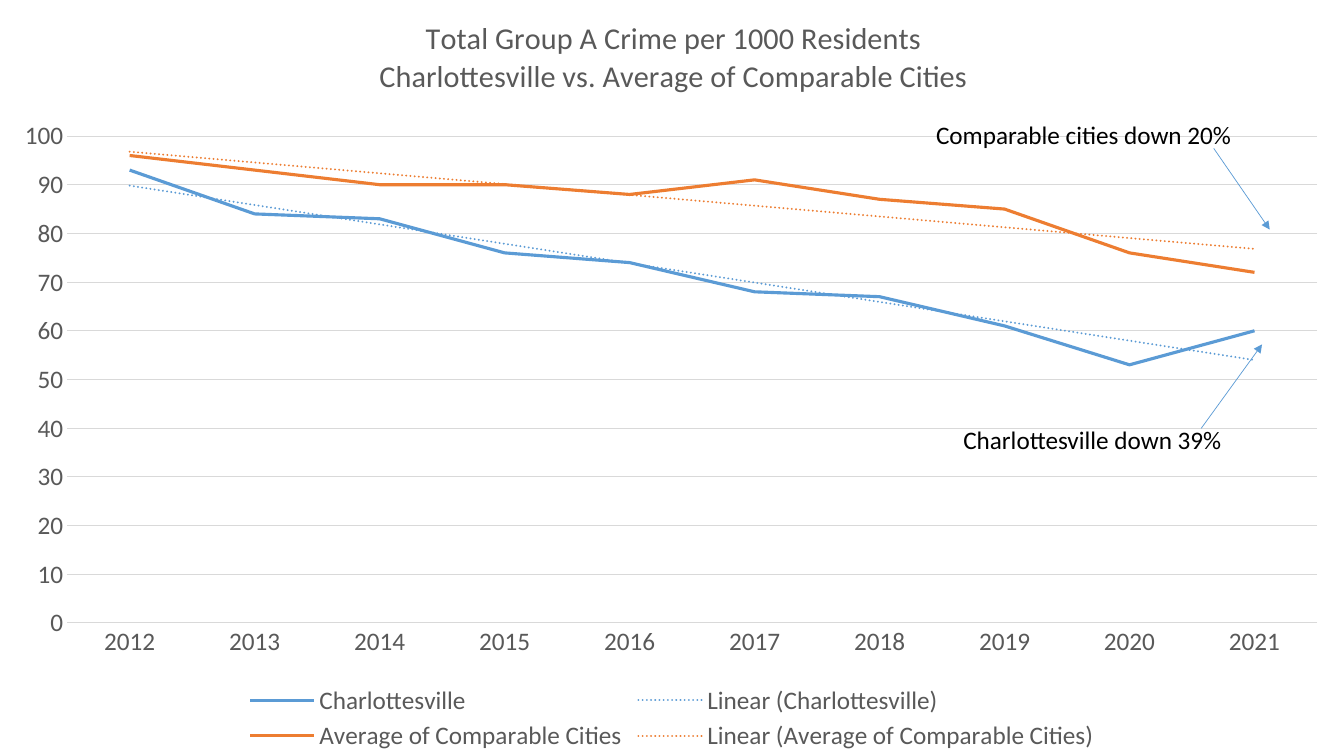
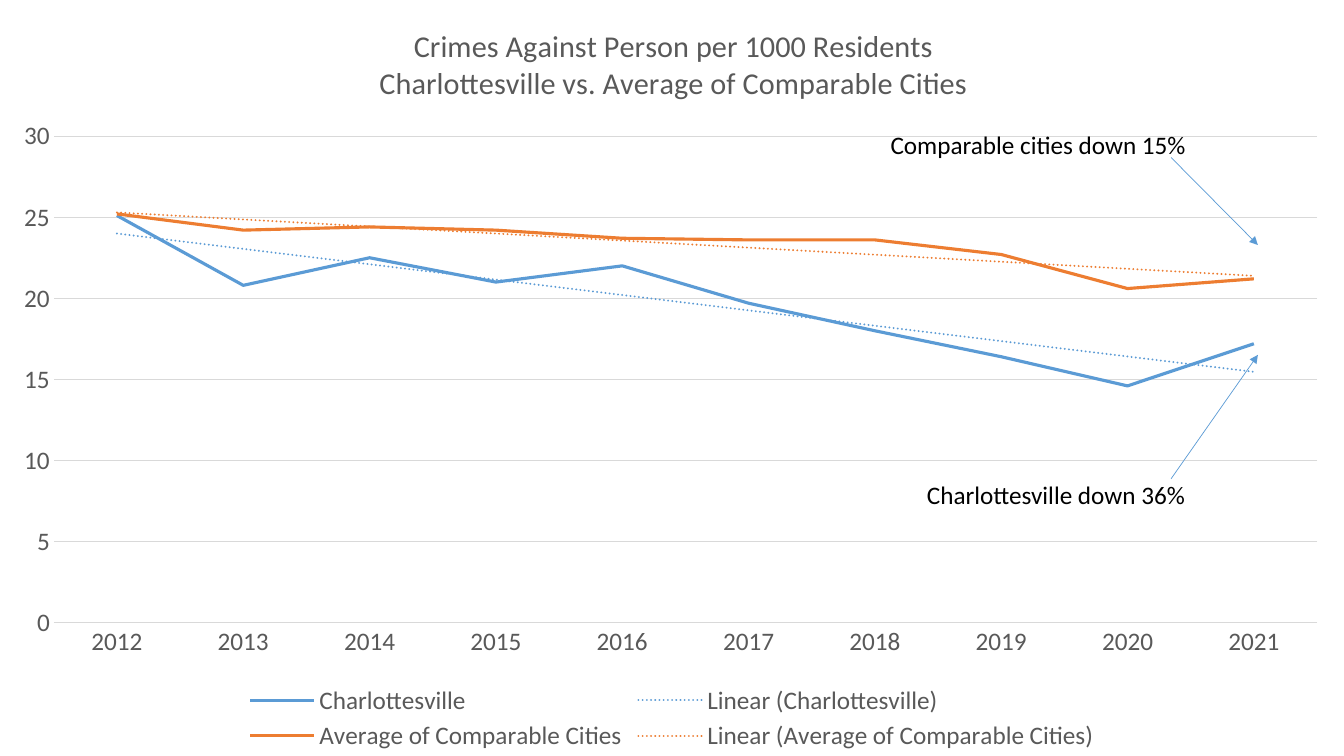
import pptx
import pptx.util
import pptx.chart.data
import pptx.dml.color
import pptx.enum.chart
import pptx.enum.dml
import pptx.enum.shapes
import pptx.enum.text
import pptx.oxml
import pptx.oxml.ns

Pt = pptx.util.Pt
qn = pptx.oxml.ns.qn

# Shared look
WIDTH, HEIGHT = 960, 540
FONT = "Calibri"
COLORS = {"city": "5B9BD5", "peers": "ED7D31", "label": "595959",
          "grid": "D9D9D9", "text": "000000"}
SERIES = [("Charlottesville", "city"), ("Average of Comparable Cities", "peers")]
YEARS = [str(year) for year in range(2012, 2022)]
SUBTITLE = "Charlottesville vs. Average of Comparable Cities"

# Annotation: text, text box (left, top, width), arrow start, arrow end
SLIDES = [
    {"title": "Total Group A Crime per 1000 Residents", "title_top": 0.02,
     "plot_left": 0.05, "max": 100, "step": 10,
     "city": [93, 84, 83, 76, 74, 68, 67, 61, 53, 60],
     "peers": [96, 93, 90, 90, 88, 91, 87, 85, 76, 72],
     "notes": [
         ("Charlottesville down 39%", (681, 299.5, 202), (858, 306), (901.5, 246)),
         ("Comparable cities down 20%", (661.5, 81.5, 240), (867, 106), (907, 164)),
     ]},
    {"title": "Crimes Against Person per 1000 Residents", "title_top": 0.03,
     "plot_left": 0.04, "max": 30, "step": 5,
     "city": [25.1, 20.8, 22.5, 21, 22, 19.7, 18, 16.4, 14.6, 17.2],
     "peers": [25.2, 24.2, 24.4, 24.2, 23.7, 23.6, 23.6, 22.7, 20.6, 21.2],
     "notes": [
         ("Charlottesville down 36%", (655, 338.5, 202), (836.5, 342), (898.5, 253.5)),
         ("Comparable cities down 15%", (629, 88.5, 228), (836.5, 112.5), (898.5, 175)),
     ]},
]


def rgb(name):
    return pptx.dml.color.RGBColor.from_string(COLORS[name])


def style_font(font, size=18, color="label"):
    font.name, font.size, font.bold = FONT, Pt(size), False
    font.color.rgb = rgb(color)


def style_line(line, color, width):
    line.color.rgb = rgb(color)
    line.width = Pt(width)


def write(tf, text, size=18, color="text", align=pptx.enum.text.PP_ALIGN.LEFT):
    """Write each line of text as a formatted paragraph."""
    for i, line in enumerate(text.split("\n")):
        p = tf.add_paragraph() if i else tf.paragraphs[0]
        p.alignment = align
        r = p.add_run()
        r.text = line
        style_font(r.font, size, color)


def chart_xml(body):
    return pptx.oxml.parse_xml(
        body.replace(">", " " + pptx.oxml.ns.nsdecls("c", "a") + ">", 1))


def set_layout(element, index, target=None, **place):
    """Place a chart part by fractions of the chart's size."""
    for old in element.findall(qn("c:layout")):
        element.remove(old)
    parts = f'<c:layoutTarget val="{target}"/>' if target else ""
    parts += "".join(f'<c:{key}Mode val="edge"/>' for key in "xy")
    parts += "".join(f'<c:{key} val="{value}"/>' for key, value in place.items())
    element.insert(index, chart_xml(
        f"<c:layout><c:manualLayout>{parts}</c:manualLayout></c:layout>"))


def add_trend(series, color):
    trend = chart_xml(
        '<c:trendline><c:spPr><a:ln w="19050" cap="rnd"><a:solidFill>'
        f'<a:srgbClr val="{COLORS[color]}"/></a:solidFill>'
        '<a:prstDash val="sysDot"/></a:ln></c:spPr>'
        '<c:trendlineType val="linear"/><c:dispRSqr val="0"/>'
        '<c:dispEq val="0"/></c:trendline>')
    series._element.find(qn("c:cat")).addprevious(trend)


def add_crime_chart(slide, box, data):
    chart_data = pptx.chart.data.CategoryChartData()
    chart_data.categories = YEARS
    for name, key in SERIES:
        chart_data.add_series(name, data[key])
    chart = slide.shapes.add_chart(
        pptx.enum.chart.XL_CHART_TYPE.LINE, *map(Pt, box), chart_data).chart
    style_font(chart.font, color="text")

    # Title
    chart.has_title = True
    write(chart.chart_title.text_frame, data["title"] + "\n" + SUBTITLE,
          size=21.6, color="label", align=pptx.enum.text.PP_ALIGN.CENTER)
    set_layout(chart.chart_title._element, 1, x=0.28, y=data["title_top"])

    # Plot area
    left = data["plot_left"]
    set_layout(chart._chartSpace.chart.plotArea, 0, "inner",
               x=left, y=0.18, w=round(0.98 - left, 2), h=0.644)
    chart.plots[0].vary_by_categories = False
    for series, (_, color) in zip(chart.plots[0].series, SERIES):
        series.smooth = False
        style_line(series.format.line, color, 2.25)
        add_trend(series, color)

    # Axes
    years, rates = chart.category_axis, chart.value_axis
    for axis in (years, rates):
        axis.major_tick_mark = axis.minor_tick_mark = pptx.enum.chart.XL_TICK_MARK.NONE
        style_font(axis.tick_labels.font)
    style_line(years.format.line, "grid", 0.75)
    rates.format.line.fill.background()
    rates.minimum_scale, rates.maximum_scale = 0, data["max"]
    rates.major_unit = data["step"]
    rates.tick_labels.number_format = "#,##0"
    rates.tick_labels.number_format_is_linked = False
    rates.has_major_gridlines = True
    style_line(rates.major_gridlines.format.line, "grid", 0.75)

    # Legend
    chart.has_legend = True
    chart.legend.position = pptx.enum.chart.XL_LEGEND_POSITION.BOTTOM
    chart.legend.include_in_layout = False
    style_font(chart.legend.font)
    set_layout(chart.legend._element, 1, x=0.18, y=0.9, w=0.64, h=0.1)


def add_annotation(slide, box, text, place, start, end):
    x, y = box[:2]
    left, top, width = place
    sp = slide.shapes.add_textbox(Pt(x + left), Pt(y + top), Pt(width), Pt(29))
    sp.text_frame.word_wrap = True
    write(sp.text_frame, text)

    # Arrow
    arrow = slide.shapes.add_connector(
        pptx.enum.shapes.MSO_CONNECTOR.STRAIGHT,
        Pt(x + start[0]), Pt(y + start[1]), Pt(x + end[0]), Pt(y + end[1]))
    style_line(arrow.line, "city", 0.5)
    ln = arrow.line._get_or_add_ln()
    ln.append(pptx.oxml.parse_xml(
        f'<a:tailEnd {pptx.oxml.ns.nsdecls("a")} type="triangle"/>'))
    ln.addnext(pptx.oxml.parse_xml(
        f'<a:effectLst {pptx.oxml.ns.nsdecls("a")}/>'))


def add_crime_slide(prs, box, data):
    slide = prs.slides.add_slide(prs.slide_layouts[6])
    add_crime_chart(slide, box, data)
    for note in data["notes"]:
        add_annotation(slide, box, *note)


def main():
    prs = pptx.Presentation()
    prs.slide_width, prs.slide_height = Pt(WIDTH), Pt(HEIGHT)
    for data in SLIDES:
        add_crime_slide(prs, (0, 0, WIDTH, HEIGHT), data)
    prs.save("out.pptx")


if __name__ == "__main__":
    main()
